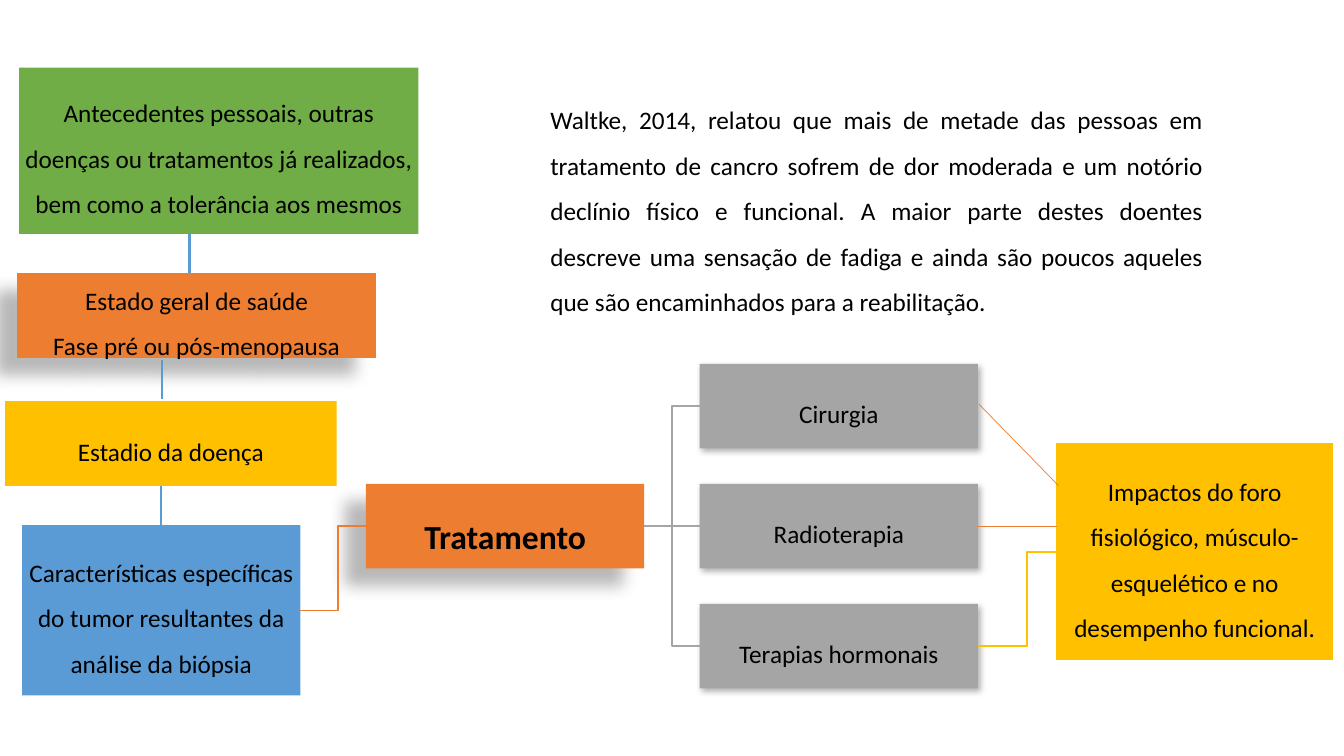
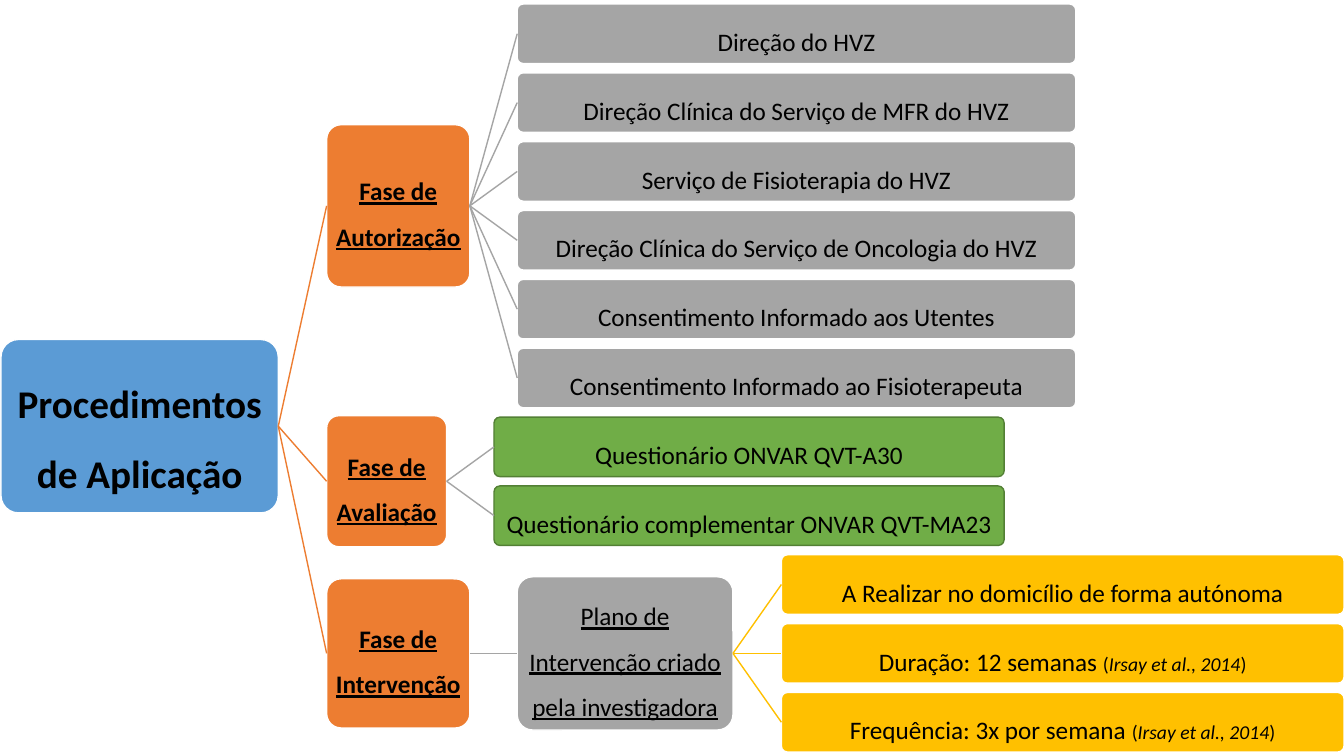
from dataclasses import dataclass
from typing import Optional

import pptx
import pptx.dml.color
import pptx.enum.shapes
import pptx.enum.text
import pptx.oxml
import pptx.oxml.ns
import pptx.util
from pptx.util import Inches, Pt

SHAPE = pptx.enum.shapes.MSO_SHAPE
CONNECTOR = pptx.enum.shapes.MSO_CONNECTOR
ALIGN = pptx.enum.text.PP_ALIGN
LEFT, RIGHT = 1, 3  # connection sites of a rectangle


# Theme
@dataclass(frozen=True)
class Theme:
    font: str = "Calibri"
    text: str = "000000"
    white: str = "FFFFFF"
    blue: str = "5B9BD5"
    orange: str = "ED7D31"
    gray: str = "A5A5A5"
    gold: str = "FFC000"
    green: str = "70AD47"
    dark_green: str = "538035"
    note: int = 14
    body: int = 18
    heading: int = 24
    title: int = 28
    spacing: float = 1.5


@dataclass(frozen=True)
class Shadow:
    alpha: int
    blur: float
    dist: float
    angle: int


T = Theme()
LONG_SHADOW = Shadow(28, 11.8, 19.7, 141)
SOFT_SHADOW = Shadow(30, 4.5, 2.6, 53)


@dataclass(frozen=True)
class Box:
    text: str
    x: float
    y: float
    w: float
    h: float
    fill: str
    line: Optional[str] = None
    size: int = T.body
    bold: bool = False
    underline: bool = False
    rounded: bool = False
    shadow: Optional[Shadow] = None
    cite: str = ""


@dataclass(frozen=True)
class Branch:
    head: Box
    rows: tuple[Box, ...]
    color: str


# Drawing helpers
def rgb(color: str) -> pptx.dml.color.RGBColor:
    return pptx.dml.color.RGBColor.from_string(color)


def format_paragraph(p, size: int, align, bold: bool = False, underline: bool = False) -> None:
    p.alignment = align
    p.line_spacing = T.spacing
    p.font.name = T.font
    p.font.size = Pt(size)
    p.font.bold = bold
    p.font.underline = underline
    p.font.color.rgb = rgb(T.text)


def add_effects(sp_pr, shadow: Optional[Shadow] = None) -> None:
    effects = pptx.oxml.parse_xml(f"<a:effectLst {pptx.oxml.ns.nsdecls('a')}/>")
    if shadow:
        effects.append(pptx.oxml.parse_xml(
            f'<a:outerShdw {pptx.oxml.ns.nsdecls("a")} blurRad="{Pt(shadow.blur)}" '
            f'dist="{Pt(shadow.dist)}" dir="{shadow.angle * 60000}" algn="ctr" rotWithShape="0">'
            f'<a:srgbClr val="000000"><a:alpha val="{shadow.alpha * 1000}"/></a:srgbClr>'
            '</a:outerShdw>'))
    sp_pr.append(effects)


def add_box(s, box: Box):
    kind = SHAPE.ROUNDED_RECTANGLE if box.rounded else SHAPE.RECTANGLE
    sp = s.shapes.add_shape(kind, Inches(box.x), Inches(box.y), Inches(box.w), Inches(box.h))
    if box.rounded:
        sp.adjustments[0] = 0.1
    sp.fill.solid()
    sp.fill.fore_color.rgb = rgb(box.fill)
    if box.line:
        sp.line.color.rgb = rgb(box.line)
        sp.line.width = Pt(1)
    else:
        sp.line.fill.background()
    if box.shadow:
        add_effects(sp.element.spPr, box.shadow)
    else:
        sp.shadow.inherit = False

    tf = sp.text_frame
    tf.word_wrap = True
    tf.vertical_anchor = pptx.enum.text.MSO_ANCHOR.MIDDLE
    tf.margin_left = tf.margin_right = tf.margin_top = tf.margin_bottom = Inches(0.01)
    p = tf.paragraphs[0]
    p.text = box.text
    format_paragraph(p, box.size, ALIGN.CENTER, box.bold, box.underline)
    p.space_after = Pt(box.size * 0.35)
    if box.cite:
        for text, italic in (("(", False), (box.cite, True), (")", False)):
            r = p.add_run()
            r.text = text
            r.font.size = Pt(T.note)
            r.font.italic = italic
    return sp


def add_line(s, color: str, width: float, x1: float = 0, y1: float = 0,
             x2: float = 0, y2: float = 0, kind=CONNECTOR.STRAIGHT):
    line = s.shapes.add_connector(kind, Inches(x1), Inches(y1), Inches(x2), Inches(y2))
    line.line.color.rgb = rgb(color)
    line.line.width = Pt(width)
    add_effects(line.element.spPr)
    return line


def join(s, source, target, color: str, bend: Optional[int] = None) -> None:
    """Link right side to left side; bend is the elbow position in percent."""
    kind = CONNECTOR.STRAIGHT if bend is None else CONNECTOR.ELBOW
    line = add_line(s, color, 1, kind=kind)
    line.begin_connect(source, RIGHT)
    line.end_connect(target, LEFT)
    if bend is not None:
        guides = line.element.spPr.find(pptx.oxml.ns.qn("a:prstGeom")).get_or_add_avLst()
        guides.append(pptx.oxml.parse_xml(
            f'<a:gd {pptx.oxml.ns.nsdecls("a")} name="adj1" fmla="val {bend * 1000}"/>'))


# Slide 1: factors, treatment and impacts
def build_treatment(s) -> None:
    factors = (
        Box("Antecedentes pessoais, outras doenças ou tratamentos já realizados, "
            "bem como a tolerância aos mesmos", 0.19, 0.67, 3.96, 1.65, T.green),
        Box("Estado geral de saúde\vFase pré ou pós-menopausa",
            0.17, 2.71, 3.56, 0.84, T.orange, shadow=LONG_SHADOW),
        Box("Estadio da doença", 0.05, 3.98, 3.29, 0.84, T.gold),
        Box("Características específicas do tumor resultantes da análise da biópsia",
            0.22, 5.21, 2.76, 1.69, T.blue),
    )
    tumour = [add_box(s, box) for box in factors][-1]
    for x, y in ((1.88, 2.32), (1.61, 3.57), (1.6, 4.82)):
        add_line(s, T.blue, 1.5, x, y, x, y + 0.39)

    treatment = add_box(s, Box("Tratamento", 3.63, 4.8, 2.76, 0.84, T.orange,
                               size=T.heading, bold=True, shadow=LONG_SHADOW))
    join(s, tumour, treatment, T.orange, bend=57)

    therapies = []
    for i, name in enumerate(("Cirurgia", "Radioterapia", "Terapias hormonais")):
        therapy = add_box(s, Box(name, 6.94, 3.61 + 1.19 * i, 2.76, 0.84, T.gray,
                                 shadow=SOFT_SHADOW))
        join(s, treatment, therapy, T.gray, bend=None if i == 1 else 50)
        therapies.append(therapy)

    impacts = add_box(s, Box(
        "Impactos do foro fisiológico, músculo-esquelético e no desempenho funcional.",
        10.47, 4.39, 2.76, 2.17, T.gold, T.white))
    join(s, therapies[-1], impacts, T.gold, bend=63)
    add_line(s, T.orange, 0.5, 9.69, 5.22, 10.48, 5.22)
    add_line(s, T.orange, 0.5, 9.71, 4.01, 10.5, 4.82)

    tf = s.shapes.add_textbox(Inches(5.36), Inches(0.84), Inches(6.67), Inches(2.33)).text_frame
    tf.word_wrap = True
    p = tf.paragraphs[0]
    p.text = ("Waltke, 2014, relatou que mais de metade das pessoas em tratamento de cancro "
              "sofrem de dor moderada e um notório declínio físico e funcional. A maior parte "
              "destes doentes descreve uma sensação de fadiga e ainda são poucos aqueles que "
              "são encaminhados para a reabilitação.")
    format_paragraph(p, T.body, ALIGN.JUSTIFY)


# Slide 2: procedure tree, whose leaves share one grid of rows
ROW_TOP, ROW_H = 0.04, 0.59
ROW_PITCH = (6.87 - ROW_TOP) / 10


def row_y(row: float) -> float:
    return ROW_TOP + ROW_PITCH * row


def leaf(row: int, text: str, x: float, w: float, fill: str,
         line: str = T.white, cite: str = "") -> Box:
    return Box(text, x, row_y(row), w, ROW_H, fill, line, rounded=True, cite=cite)


def node(text: str, x: float, middle_row: float, w: float, h: float, fill: str,
         size: int = T.body, bold: bool = True, underline: bool = True) -> Box:
    y = row_y(middle_row) + (ROW_H - h) / 2
    return Box(text, x, y, w, h, fill, T.white, size, bold, underline, rounded=True)


def build_procedures(s) -> None:
    root = add_box(s, node("Procedimentos de Aplicação", 0.01, 5.7, 2.75, 1.72, T.blue,
                           size=T.title, underline=False))
    permissions = ("Direção do HVZ",
                   "Direção Clínica do Serviço de MFR do HVZ",
                   "Serviço de Fisioterapia do HVZ",
                   "Direção Clínica do Serviço de Oncologia do HVZ",
                   "Consentimento Informado aos Utentes",
                   "Consentimento Informado ao Fisioterapeuta")
    forms = ("Questionário ONVAR QVT-A30", "Questionário complementar ONVAR QVT-MA23")
    plan = (("A Realizar no domicílio de forma autónoma", ""),
            ("Duração: 12 semanas ", "Irsay et al., 2014"),
            ("Frequência: 3x por semana ", "Irsay et al., 2014"))
    phases = (
        Branch(node("Fase de Autorização", 3.24, 2.5, 1.42, 1.61, T.orange),
               tuple(leaf(i, text, 5.13, 5.54, T.gray) for i, text in enumerate(permissions)),
               T.gray),
        Branch(node("Fase de Avaliação", 3.24, 6.5, 1.19, 1.3, T.orange),
               tuple(leaf(i, text, 4.9, 5.06, T.green, T.dark_green)
                     for i, text in enumerate(forms, 6)),
               T.gray),
        Branch(node("Fase de Intervenção", 3.24, 9, 1.42, 1.48, T.orange),
               (node("Plano de Intervenção criado pela investigadora", 5.13, 9, 2.14, 1.52,
                     T.gray, bold=False),),
               T.gray),
    )
    for phase in phases:
        head = add_box(s, phase.head)
        join(s, root, head, T.orange)
        for row in phase.rows:
            child = add_box(s, row)
            join(s, head, child, phase.color)

    # The last child is the plan, which opens into its own rows
    for i, (text, cite) in enumerate(plan, 8):
        join(s, child, add_box(s, leaf(i, text, 7.75, 5.58, T.gold, cite=cite)), T.gold)


def main() -> None:
    prs = pptx.Presentation()
    prs.slide_width, prs.slide_height = Inches(13.33), Inches(7.5)
    for build in (build_treatment, build_procedures):
        build(prs.slides.add_slide(prs.slide_layouts[6]))
    prs.save("out.pptx")


if __name__ == "__main__":
    main()
